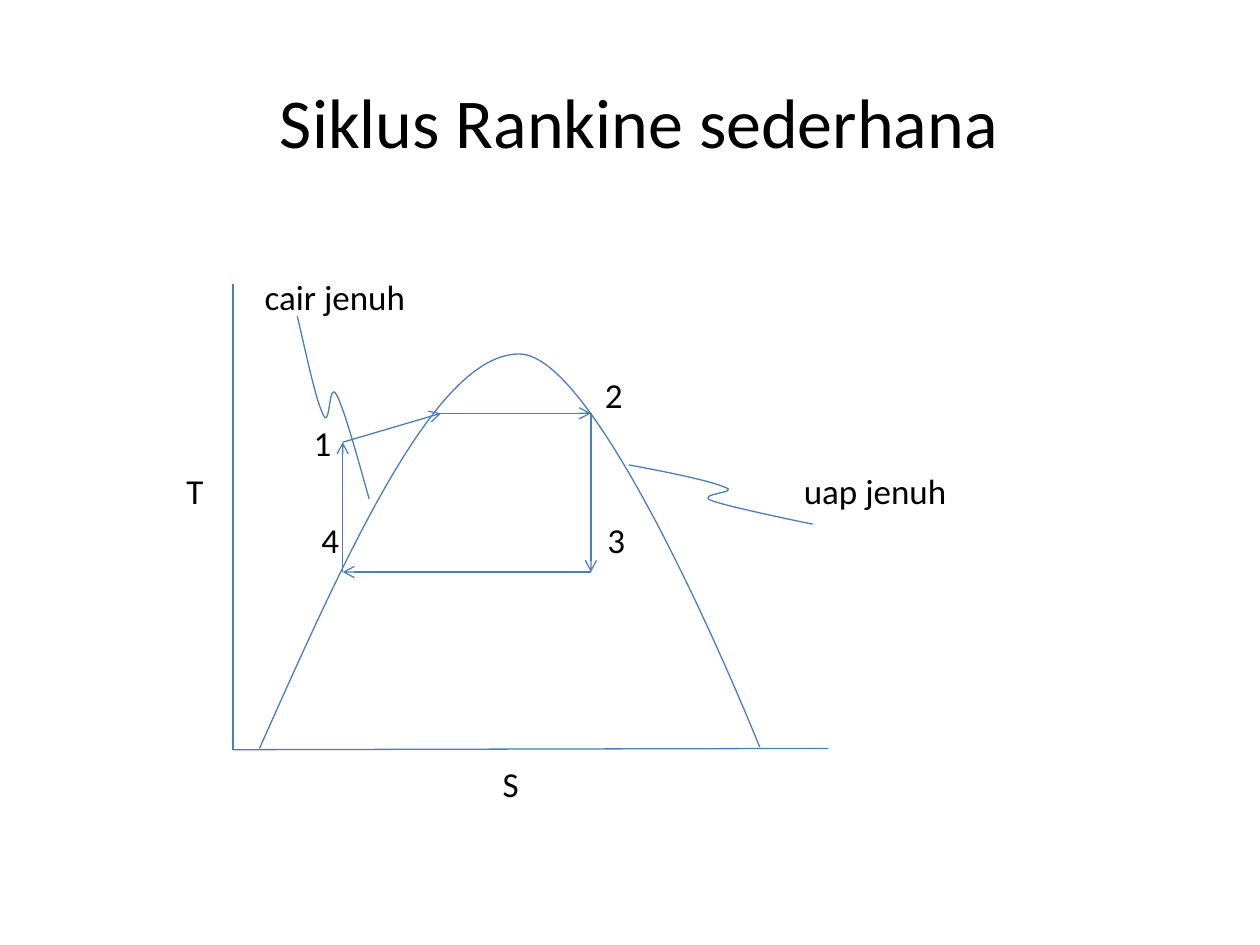
"""Build the simple Rankine cycle slide with its T-S diagram."""
import pptx
import pptx.util
from lxml import etree
from pptx.dml.color import RGBColor
from pptx.enum.shapes import MSO_CONNECTOR
from pptx.enum.text import MSO_ANCHOR, PP_ALIGN
from pptx.oxml.ns import qn
from pptx.util import Inches

BLACK = RGBColor(0, 0, 0)
BLUE = RGBColor(0x4B, 0x7E, 0xBC)
FONT = "Calibri"
TITLE = "Siklus Rankine sederhana"

BODY_LEFT = 0.5
ROW_PITCH, ROW_GAP = 28, 3.6
LABEL_ROWS = [
    (0, [("cair jenuh", 2.1)]),
    (2, [("2", 4.8)]),
    (3, [("1", 2.49)]),
    (4, [("T", 1.48), ("uap jenuh", 6.38)]),
    (5, [("4", 2.55), ("3", 4.82)]),
    (10, [("S", 3.99)]),
]

ORIGIN = (1.85, 5.95)
AXES = [((1.85, 2.25), ORIGIN), (ORIGIN, (6.57, 5.94))]

PUMPED, BOILING, STEAM = (2.72, 3.51), (3.5, 3.28), (4.69, 3.28)
EXHAUST, CONDENSED = (4.69, 4.54), (2.72, 4.54)
HEATING = [(PUMPED, BOILING), (BOILING, STEAM)]
RETURN = [(CONDENSED, PUMPED), (EXHAUST, CONDENSED), (STEAM, EXHAUST)]

SATURATION_DOME = [(2.06, 5.94), (2.76, 4.37), (3.46, 2.81), (4.12, 2.81),
                   (4.78, 2.8), (6.03, 5.93), (6.03, 5.93)]
LIQUID_LEADER = [(2.36, 2.51), (2.44, 2.85), (2.51, 3.19), (2.57, 3.3),
                 (2.62, 3.4), (2.61, 3.02), (2.67, 3.13),
                 (2.73, 3.24), (2.83, 3.6), (2.93, 3.96)]
VAPOUR_LEADER = [(4.99, 3.69), (5.32, 3.75), (5.65, 3.82), (5.76, 3.87),
                 (5.87, 3.91), (5.53, 3.92), (5.64, 3.97),
                 (5.76, 4.02), (6.45, 4.16), (6.45, 4.16)]


def add_frame(s, box, margins):
    tf = s.shapes.add_textbox(*map(Inches, box)).text_frame
    tf.word_wrap = True
    tf.margin_left, tf.margin_top, tf.margin_right, tf.margin_bottom = map(Inches, margins)
    return tf


def style_font(p, size):
    p.font.name = FONT
    p.font.size = pptx.util.Pt(size)
    p.font.color.rgb = BLACK


def add_title(s):
    tf = add_frame(s, (0.5, 0.3, 9, 1.25), (0.14, 0.06, 0, 0))
    tf.vertical_anchor = MSO_ANCHOR.MIDDLE
    p = tf.paragraphs[0]
    p.text = TITLE
    p.alignment = PP_ALIGN.CENTER
    style_font(p, 40)


def add_labels(s):
    tf = add_frame(s, (BODY_LEFT, 1.75, 9, 4.95), (0, 0.44, 0, 0))
    previous = None
    for row, labels in LABEL_ROWS:
        p = tf.paragraphs[0] if previous is None else tf.add_paragraph()
        p.text = "".join("\t" + text for text, x in labels)
        if previous is not None:
            p.space_before = pptx.util.Pt(ROW_GAP + (row - previous - 1) * ROW_PITCH)
        style_font(p, 20)
        tabs = etree.Element(qn("a:tabLst"))
        for text, x in labels:
            etree.SubElement(tabs, qn("a:tab"), pos=str(Inches(x - BODY_LEFT)), algn="l")
        p._p.pPr.find(qn("a:defRPr")).addprevious(tabs)
        previous = row


def style_line(sp):
    sp.line.color.rgb = BLUE
    sp.line.width = pptx.util.Pt(0.75)


def add_lines(s, segments, arrow=False):
    for start, end in segments:
        sp = s.shapes.add_connector(MSO_CONNECTOR.STRAIGHT, *map(Inches, start + end))
        style_line(sp)
        properties = sp._element.spPr
        if arrow:
            etree.SubElement(properties.find(qn("a:ln")), qn("a:tailEnd"), type="arrow")
        etree.SubElement(properties, qn("a:effectLst"))


def add_curve(s, controls):
    points = [tuple(map(Inches, point)) for point in controls]
    builder = s.shapes.build_freeform(*points[0])
    builder.add_line_segments(points[1:], close=False)
    sp = builder.convert_to_shape()
    sp.fill.background()
    sp.shadow.inherit = False
    style_line(sp)
    segments = list(sp._element.iter(qn("a:lnTo")))
    for i in range(0, len(segments), 3):
        curve = etree.Element(qn("a:cubicBezTo"))
        segments[i].addprevious(curve)
        for segment in segments[i:i + 3]:
            curve.append(segment[0])
            segment.getparent().remove(segment)


def main():
    prs = pptx.Presentation()
    prs.slide_width, prs.slide_height = Inches(10), Inches(7.5)
    s = prs.slides.add_slide(prs.slide_layouts[6])
    add_title(s)
    add_labels(s)
    add_lines(s, AXES)
    add_curve(s, SATURATION_DOME)
    add_lines(s, HEATING, arrow=True)
    add_curve(s, LIQUID_LEADER)
    add_curve(s, VAPOUR_LEADER)
    add_lines(s, RETURN, arrow=True)
    prs.save("out.pptx")


if __name__ == "__main__":
    main()
